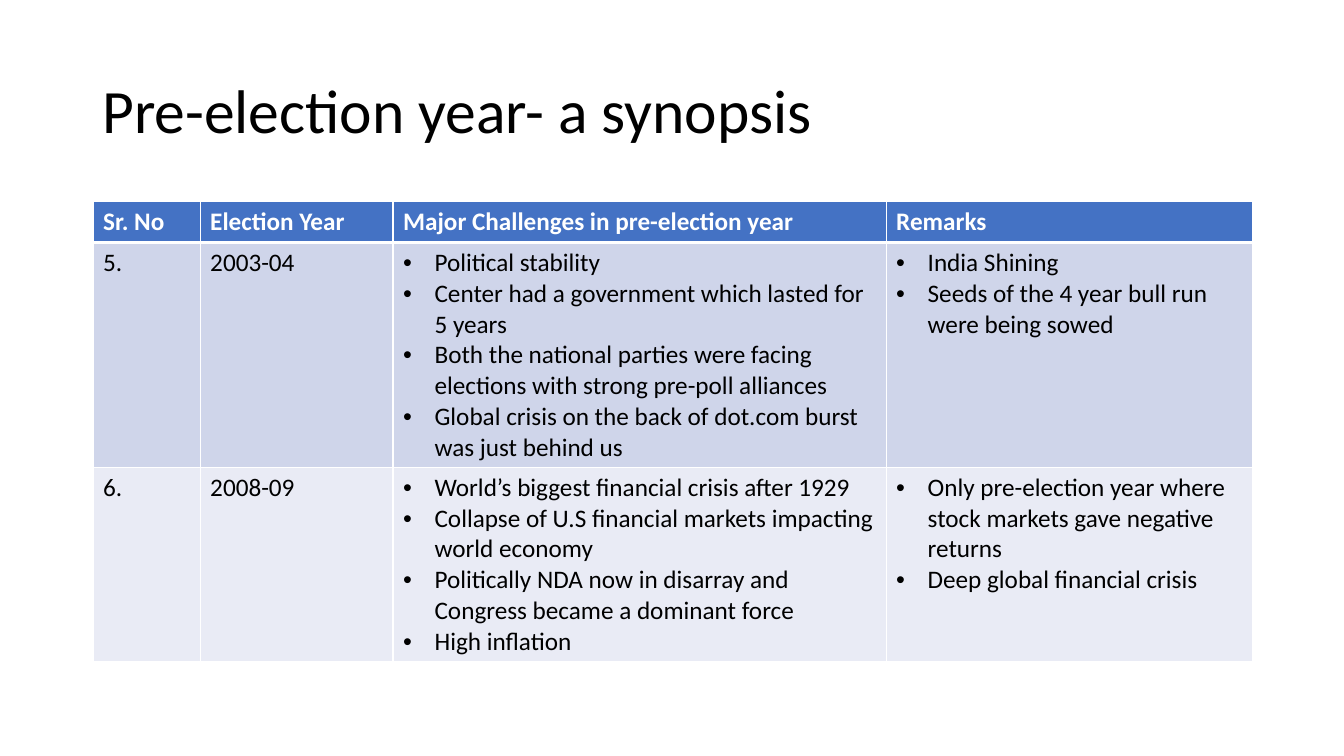
from lxml import etree
from pptx import Presentation
from pptx import util as u
from pptx.dml.color import RGBColor
from pptx.enum import text
from pptx.oxml import ns

BLACK = RGBColor(0x00, 0x00, 0x00)
WHITE = RGBColor(0xFF, 0xFF, 0xFF)
HEADER_BLUE = RGBColor(0x44, 0x72, 0xC4)
BAND_DARK = RGBColor(0xCF, 0xD5, 0xEA)
BAND_LIGHT = RGBColor(0xE9, 0xEB, 0xF5)
FONT = "Calibri"

COLUMN_WIDTHS = [76.5, 137.75, 352.25, 261.5]
ROW_HEIGHTS = [29.2, 160.6, 139]
ROW_FILLS = [HEADER_BLUE, BAND_DARK, BAND_LIGHT]
ROWS = [
    ["Sr. No", "Election Year", "Major Challenges in pre-election year", "Remarks"],
    ["5.", "2003-04",
     ["Political stability",
      "Center had a government which lasted for 5 years",
      "Both the national parties were facing elections with strong pre-poll alliances",
      "Global crisis on the back of dot.com burst was just behind us"],
     ["India Shining",
      "Seeds of the 4 year bull run were being sowed"]],
    ["6.", "2008-09",
     ["World’s biggest financial crisis after 1929",
      "Collapse of U.S financial markets impacting world economy",
      "Politically NDA now in disarray and Congress became a dominant force",
      "High inflation"],
     ["Only pre-election year where stock markets gave negative returns",
      "Deep global financial crisis"]],
]


def style_font(font, size, color, bold=False):
    font.name = FONT
    font.size = u.Pt(size)
    font.bold = bold
    font.color.rgb = color


def add_border(cell, side, width):
    line = etree.SubElement(cell._tc.get_or_add_tcPr(), ns.qn("a:" + side), w=str(u.Pt(width)))
    fill = etree.SubElement(line, ns.qn("a:solidFill"))
    etree.SubElement(fill, ns.qn("a:srgbClr"), val=str(WHITE))


deck = Presentation()
deck.slide_width = u.Pt(960)
deck.slide_height = u.Pt(540)
page = deck.slides.add_slide(deck.slide_layouts[6])

title = page.shapes.add_textbox(u.Pt(66), u.Pt(28.75), u.Pt(828), u.Pt(104.4))
title.text_frame.word_wrap = True
title.text_frame.vertical_anchor = text.MSO_ANCHOR.MIDDLE
title.text_frame.text = "Pre-election year- a synopsis"
para = title.text_frame.paragraphs[0]
para.line_spacing = 0.9
style_font(para.runs[0].font, 44, BLACK)

table = page.shapes.add_table(
    len(ROWS), len(COLUMN_WIDTHS), u.Pt(66.5), u.Pt(144),
    u.Pt(sum(COLUMN_WIDTHS)), u.Pt(sum(ROW_HEIGHTS))).table
for column, width in zip(table.columns, COLUMN_WIDTHS):
    column.width = u.Pt(width)

for row_index, entries in enumerate(ROWS):
    header = row_index == 0
    table.rows[row_index].height = u.Pt(ROW_HEIGHTS[row_index])
    for column_index, entry in enumerate(entries):
        cell = table.cell(row_index, column_index)
        for side in ("lnL", "lnR", "lnT", "lnB"):
            thick = (header and side == "lnB") or (row_index == 1 and side == "lnT")
            add_border(cell, side, 3 if thick else 1)
        cell.fill.solid()
        cell.fill.fore_color.rgb = ROW_FILLS[row_index]

        bulleted = isinstance(entry, list)
        cell.text_frame.text = "\n".join(entry) if bulleted else entry
        for para in cell.text_frame.paragraphs:
            style_font(para.runs[0].font, 18, WHITE if header else BLACK, header)
            if bulleted:
                properties = para._p.get_or_add_pPr()
                properties.set("marL", str(u.Pt(22.5)))
                properties.set("indent", str(u.Pt(-22.5)))
                etree.SubElement(properties, ns.qn("a:buFont"), typeface="Arial")
                etree.SubElement(properties, ns.qn("a:buChar"), char="•")

deck.save("out.pptx")
